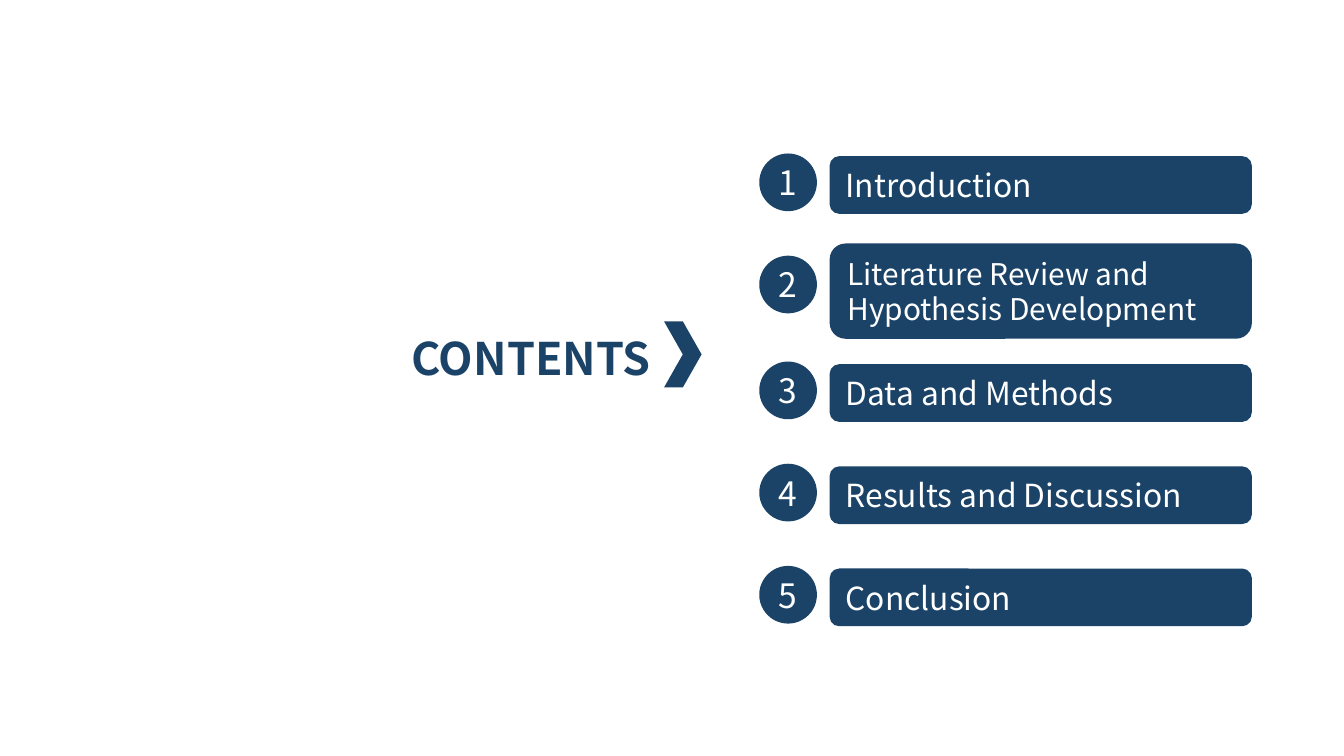
from pptx import Presentation
from pptx.dml.color import RGBColor
from pptx.enum.shapes import MSO_SHAPE as Shape
from pptx.enum.text import MSO_ANCHOR as Anchor, MSO_AUTO_SIZE as AutoSize, PP_ALIGN as Align
from pptx.util import Cm, Pt

NAVY, WHITE = "1B4367", "FFFFFF"
CHAPTERS = [
    ("Introduction", 2.9),
    ("Literature Review and Hypothesis Development", 4.83),
    ("Data and Methods", 6.83),
    ("Results and Discussion", 8.76),
    ("Conclusion", 10.69),
]
ROW_HEIGHT = 1.09


def color(value):
    """Turn a hex string into a colour."""
    return RGBColor.from_string(value)


def assign(target, formats):
    """Set every attribute named in the dict of format values."""
    for name, value in formats.items():
        setattr(target, name, value)


class ContentsSlide:
    """Hold the style and the slide that is being filled."""

    font_name = "Noto Sans CJK SC"

    def __init__(self, deck):
        """Add a title-only slide to the deck."""
        self.slide = deck.slides.add_slide(deck.slide_layouts[5])

    def label(self, holder, wording, size, tint, align=Align.LEFT, bold=False, **frame):
        """Put formatted wording into a shape."""
        text = holder.text_frame
        text.text = wording
        assign(text, {"word_wrap": True, "vertical_anchor": Anchor.MIDDLE,
                      "auto_size": AutoSize.NONE, **frame})
        line = text.paragraphs[0]
        line.alignment = align
        assign(line.font, {"name": self.font_name, "size": Pt(size), "bold": bold})
        line.font.color.rgb = color(tint)

    def title(self, wording, left, top, width, height):
        """Place and format the slide title."""
        heading = self.slide.shapes.title
        assign(heading, {"left": Cm(left), "top": Cm(top),
                         "width": Cm(width), "height": Cm(height)})
        self.label(heading, wording, 24, NAVY, bold=True)

    def block(self, kind, left, top, width, height):
        """Add a plain navy shape."""
        shape = self.slide.shapes.add_shape(kind, Cm(left), Cm(top), Cm(width), Cm(height))
        shape.shadow.inherit = False
        shape.fill.solid()
        shape.fill.fore_color.rgb = color(NAVY)
        shape.line.fill.background()
        return shape

    def badge(self, number, top):
        """Add a numbered circle."""
        circle = self.block(Shape.OVAL, 14.35, top, ROW_HEIGHT, ROW_HEIGHT)
        self.label(circle, str(number), 18, WHITE, Align.CENTER, margin_left=0,
                   margin_right=0, margin_top=0, margin_bottom=0)

    def bar(self, chapter, top, height, size):
        """Add a rounded bar with a chapter name."""
        panel = self.block(Shape.ROUNDED_RECTANGLE, 15.68, top, 7.98, height)
        self.label(panel, chapter, size, WHITE)


def main():
    """Build the contents slide."""
    deck = Presentation()
    assign(deck, {"slide_width": Cm(25.4), "slide_height": Cm(14.28)})
    contents = ContentsSlide(deck)
    contents.title("CONTENTS", 7.52, 6.12, 5.69, 1.27)
    contents.block(Shape.CHEVRON, 12.55, 6.07, 0.71, 1.25)
    for number, (chapter, top) in enumerate(CHAPTERS, 1):
        two_lines = len(chapter) > 30
        if two_lines:
            contents.bar(chapter, top - 0.23, 1.8, 16)
        else:
            contents.bar(chapter, top + 0.05, ROW_HEIGHT, 17)
        contents.badge(number, top)
    deck.save("out.pptx")


if __name__ == "__main__":
    main()
